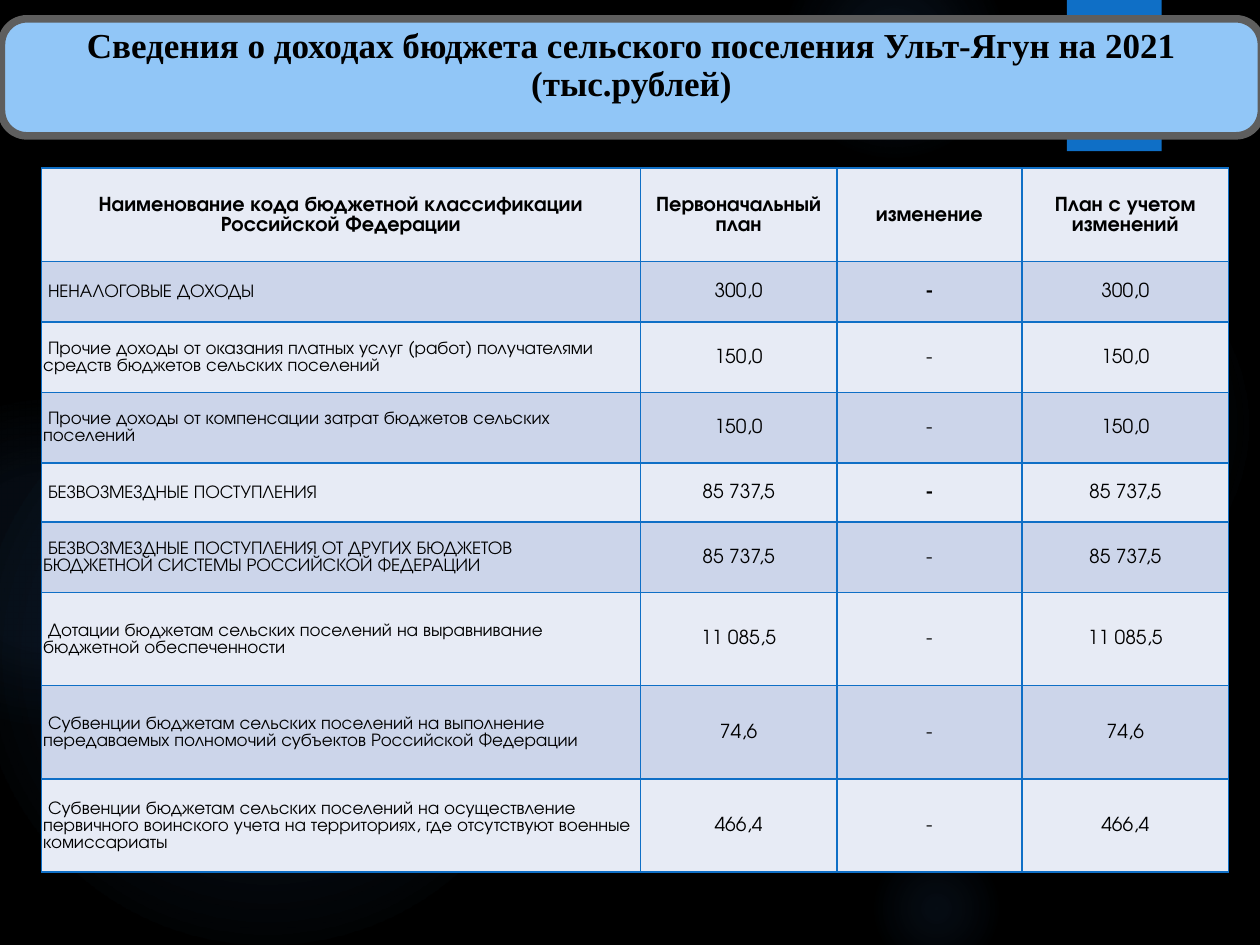
from lxml import etree
from pptx import Presentation
from pptx.dml.color import RGBColor
from pptx.enum.shapes import MSO_SHAPE
from pptx.enum.text import MSO_ANCHOR, PP_ALIGN
from pptx.oxml import parse_xml
from pptx.oxml.ns import qn
from pptx.util import Cm, Pt

OVAL, RECTANGLE, ROUNDED = MSO_SHAPE.OVAL, MSO_SHAPE.RECTANGLE, MSO_SHAPE.ROUNDED_RECTANGLE
MIDDLE, CENTER, LEFT = MSO_ANCHOR.MIDDLE, PP_ALIGN.CENTER, PP_ALIGN.LEFT
BODY_FONT, TITLE_FONT = "TeX Gyre Adventor", "Times New Roman"
BLACK, BLUE, GLOW = "000000", "0F6FC6", "448AD7"
BANDS = ("E7EBF5", "CCD5EA")
DRAWING_NS = "http://schemas.openxmlformats.org/drawingml/2006/main"

TITLE = "Сведения о доходах бюджета сельского поселения Ульт-Ягун на 2021 (тыс.рублей)"

# Left, top, diameter in cm; then (position, opacity) stops in percent
GLOWS = [
    (17.5, 4.65, 7.82, [(0, 7), (36, 6), (69, 0)]),
    (15.8, -1.27, 4.45, [(0, 14), (36, 7), (73, 0)]),
    (17.5, 16.94, 2.74, [(0, 9), (36, 5), (66, 0)]),
    (-0.43, 7.42, 11.63, [(0, 11), (36, 10), (75, 0)]),
    (-2.34, 8.05, 6.55, [(0, 8), (36, 8), (72, 0)]),
]

COLUMN_WIDTHS = (12.07, 3.96, 3.73, 4.17)
HEADERS = ("Наименование кода бюджетной классификации Российской Федерации",
           "Первоначальный план", "изменение", "План с учетом изменений")
# Name, plan, row height, bold dash, right margin of the name
INCOMES = [
    ("НЕНАЛОГОВЫЕ ДОХОДЫ", "300,0", 1.22, True, 0.03),
    ("Прочие доходы от оказания платных услуг (работ) получателями "
     "средств бюджетов сельских поселений", "150,0", 1.42, False, 0.03),
    ("Прочие доходы от компенсации затрат бюджетов сельских поселений",
     "150,0", 1.42, False, 0.03),
    ("БЕЗВОЗМЕЗДНЫЕ ПОСТУПЛЕНИЯ", "85 737,5", 1.19, True, 0.03),
    ("БЕЗВОЗМЕЗДНЫЕ ПОСТУПЛЕНИЯ ОТ ДРУГИХ БЮДЖЕТОВ "
     "БЮДЖЕТНОЙ СИСТЕМЫ РОССИЙСКОЙ ФЕДЕРАЦИИ", "85 737,5", 1.42, False, 1),
    ("Дотации бюджетам сельских поселений на выравнивание "
     "бюджетной обеспеченности", "11 085,5", 1.88, False, 1),
    ("Субвенции бюджетам сельских поселений на выполнение "
     "передаваемых полномочий субъектов Российской Федерации", "74,6", 1.88, False, 0.03),
    ("Субвенции бюджетам сельских поселений на осуществление "
     "первичного воинского учета на территориях, где отсутствуют военные "
     "комиссариаты", "466,4", 1.88, False, 0.03),
]

HEADER_FORMAT = {"name": BODY_FONT, "size": Pt(12), "bold": True}
NAME_FORMAT = {"name": BODY_FONT, "size": Pt(10.5), "bold": False}
VALUE_FORMAT = {"name": BODY_FONT, "size": Pt(11), "bold": False}
TITLE_FORMAT = {"name": TITLE_FONT, "size": Pt(20), "bold": True}


def color(hex_value):
    return RGBColor.from_string(hex_value)


def set_values(target, values):
    for name, value in values.items():
        setattr(target, name, value)


def paint(fill, hex_value):
    fill.solid()
    fill.fore_color.rgb = color(hex_value)


def write(frame, text, font_format, alignment=CENTER):
    para = frame.paragraphs[0]
    para.alignment = alignment
    span = para.add_run()
    span.text = text
    set_values(span.font, font_format)
    span.font.color.rgb = color(BLACK)
    return para


def add_box(page, kind, left, top, width, height):
    box = page.shapes.add_shape(kind, Cm(left), Cm(top), Cm(width), Cm(height))
    box.shadow.inherit = False
    box.line.fill.background()
    return box


def add_glow(page, left, top, diameter, stops):
    box = add_box(page, OVAL, left, top, diameter, diameter)
    box.fill.background()
    stop_xml = "".join(
        f'<a:gs pos="{position * 1000}"><a:srgbClr val="{GLOW}">'
        f'<a:alpha val="{opacity * 1000}"/></a:srgbClr></a:gs>'
        for position, opacity in stops)
    gradient = parse_xml(
        f'<a:gradFill xmlns:a="{DRAWING_NS}"><a:gsLst>{stop_xml}</a:gsLst>'
        '<a:path path="circle"><a:fillToRect l="50000" t="50000" r="50000" b="50000"/>'
        '</a:path></a:gradFill>')
    properties = box.element.spPr
    properties.replace(properties.find(qn("a:noFill")), gradient)


def add_title(page):
    box = add_box(page, ROUNDED, 0.03, 0.38, 25.4, 2.36)
    box.adjustments[0] = 0.217
    paint(box.fill, "91C6F7")
    paint(box.line.fill, "5E5E5E")
    box.line.width = Pt(4.33)
    # The deep bottom margin lifts the text above the middle
    set_values(box.text_frame, {
        "word_wrap": True, "vertical_anchor": MIDDLE,
        "margin_left": Cm(0.25), "margin_right": Cm(0.25),
        "margin_top": Cm(0.13), "margin_bottom": Cm(0.58)})
    write(box.text_frame, TITLE, TITLE_FORMAT).line_spacing = 0.9


def add_borders(cell):
    properties = cell._tc.get_or_add_tcPr()
    for side in ("a:lnL", "a:lnR", "a:lnT", "a:lnB"):
        line = etree.SubElement(properties, qn(side), w=str(Pt(1)))
        fill = etree.SubElement(line, qn("a:solidFill"))
        etree.SubElement(fill, qn("a:srgbClr"), val=BLUE)


def fill_cell(cell, text, font_format, band, alignment=CENTER, right=0.03):
    add_borders(cell)
    paint(cell.fill, band)
    set_values(cell, {
        "vertical_anchor": MIDDLE, "margin_left": Cm(0.03), "margin_right": Cm(right),
        "margin_top": Cm(0.03), "margin_bottom": 0})
    return write(cell.text_frame, text, font_format, alignment)


def add_income_table(page):
    heights = [1.88] + [income[2] for income in INCOMES]
    table = page.shapes.add_table(
        len(heights), len(COLUMN_WIDTHS), Cm(0.84), Cm(3.39),
        Cm(sum(COLUMN_WIDTHS)), Cm(sum(heights))).table
    for column, width in zip(table.columns, COLUMN_WIDTHS):
        column.width = Cm(width)
    for row, height in zip(table.rows, heights):
        row.height = Cm(height)

    for index, header in enumerate(HEADERS):
        fill_cell(table.cell(0, index), header, HEADER_FORMAT, BANDS[0])

    for row, (name, plan, _, bold_dash, right) in enumerate(INCOMES, start=1):
        band = BANDS[row % 2]
        para = fill_cell(table.cell(row, 0), name, NAME_FORMAT, band, LEFT, right)
        para._p.get_or_add_pPr().set("indent", str(Cm(0.1)))
        for index, value in enumerate((plan, "-", plan), start=1):
            bold = bold_dash and value == "-"
            fill_cell(table.cell(row, index), value, {**VALUE_FORMAT, "bold": bold}, band)


def main():
    deck = Presentation()
    deck.slide_width, deck.slide_height = Cm(25.4), Cm(19.05)
    page = deck.slides.add_slide(deck.slide_layouts[6])

    # Backdrop
    paint(page.background.fill, BLACK)
    for glow in GLOWS:
        add_glow(page, *glow)
    ribbon = add_box(page, RECTANGLE, 21.51, 0, 1.91, 3.05)
    paint(ribbon.fill, BLUE)

    # Content
    add_title(page)
    add_income_table(page)
    deck.save("out.pptx")


if __name__ == "__main__":
    main()
